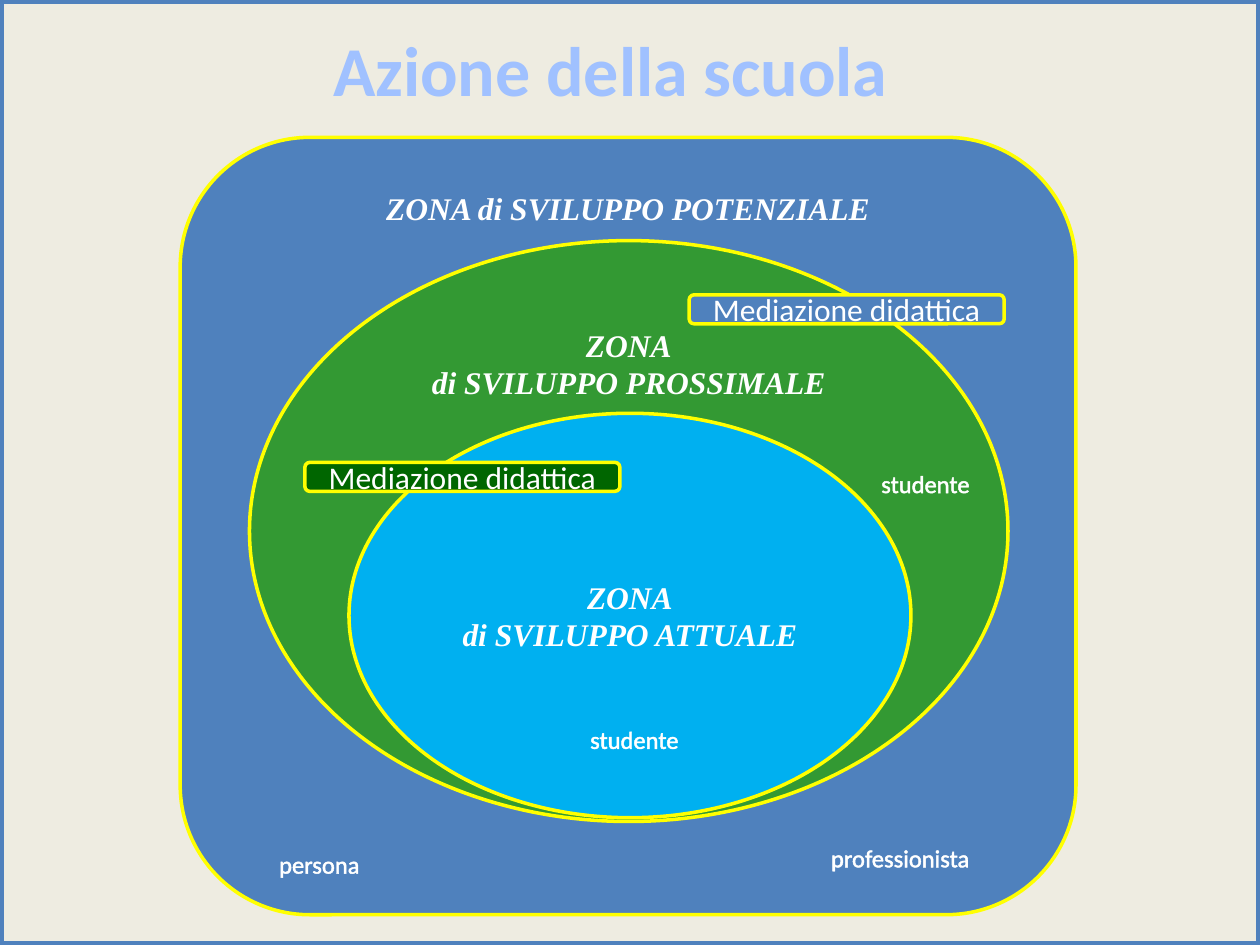
from lxml import etree
from pptx import Presentation
from pptx.dml.color import RGBColor
from pptx.enum.shapes import MSO_SHAPE as Shape
from pptx.enum.text import MSO_ANCHOR as Anchor, PP_ALIGN as Align
from pptx.oxml.ns import qn
from pptx.util import Inches, Pt

BLUE, YELLOW, WHITE = "4F81BD", "FFFF00", "FFFFFF"
GREEN, DARK_GREEN, SKY = "339933", "006600", "00B0F0"


def color(value):
    return RGBColor.from_string(value)


def write(shape, text, size, font="Calibri", ink=WHITE, bold=False, italic=False):
    frame = shape.text_frame
    frame.word_wrap = True
    frame.text = text
    for paragraph in frame.paragraphs:
        paragraph.alignment = Align.CENTER
        for run in paragraph.runs:
            run.font.size, run.font.name = Pt(size), font
            run.font.bold, run.font.italic = bold, italic
            run.font.color.rgb = color(ink)
    return frame


def add_outlined_shape(slide, kind, box, fill, line=YELLOW, width=2):
    shape = slide.shapes.add_shape(kind, *map(Inches, box))
    shape.shadow.inherit = False
    if fill:
        shape.fill.solid()
        shape.fill.fore_color.rgb = color(fill)
    else:
        shape.fill.background()
    shape.line.color.rgb = color(line)
    shape.line.width = Pt(width)
    return shape


def add_title(slide, box):
    title = slide.shapes.title
    title.left, title.top, title.width, title.height = map(Inches, box)
    frame = write(title, "Azione della scuola", 40, ink="A0C1FF", bold=True)
    frame.vertical_anchor = Anchor.MIDDLE


def add_zone(slide, kind, box, fill, text, anchor, margin=0.05):
    zone = add_outlined_shape(slide, kind, box, fill)
    frame = write(zone, text, 18, "Times New Roman", bold=True, italic=True)
    frame.vertical_anchor = anchor
    frame.margin_top = Inches(margin)


def add_mediation(slide, left, top, fill):
    box = (left, top, 2.5, 0.23)
    tag = add_outlined_shape(slide, Shape.ROUNDED_RECTANGLE, box, fill)
    write(tag, "Mediazione didattica", 18).vertical_anchor = Anchor.MIDDLE


def add_role(slide, text, left, top, width=1.95):
    label = slide.shapes.add_textbox(*map(Inches, (left, top, width, 0.34)))
    frame = write(label, text, 14)
    properties = frame.paragraphs[0].runs[0].font._element
    outline = etree.Element(qn("a:ln"), w=str(Pt(1.45)))
    fill = etree.SubElement(outline, qn("a:solidFill"))
    etree.SubElement(fill, qn("a:srgbClr"), val=WHITE)
    properties.insert(0, outline)


def add_zones(slide):
    add_zone(slide, Shape.ROUNDED_RECTANGLE, (1.43, 1.09, 7.11, 6.17), BLUE,
             "ZONA di SVILUPPO POTENZIALE", Anchor.TOP, 0.11)
    add_outlined_shape(slide, Shape.RECTANGLE, (0, 0, 10, 7.5), None, BLUE, 4.5)
    add_zone(slide, Shape.OVAL, (1.98, 1.91, 6.02, 4.61), GREEN,
             "ZONA\ndi SVILUPPO PROSSIMALE", Anchor.TOP, 0)
    add_zone(slide, Shape.OVAL, (2.77, 3.28, 4.46, 3.21), SKY,
             "ZONA\ndi SVILUPPO ATTUALE", Anchor.MIDDLE)


def main():
    presentation = Presentation()
    presentation.slide_width, presentation.slide_height = Inches(10), Inches(7.5)
    slide = presentation.slides.add_slide(presentation.slide_layouts[5])
    slide.background.fill.solid()
    slide.background.fill.fore_color.rgb = color("EEECE1")
    add_title(slide, (1.33, 0.16, 7.03, 0.77))
    add_zones(slide)
    add_mediation(slide, 2.42, 3.67, DARK_GREEN)
    add_mediation(slide, 5.47, 2.34, BLUE)
    add_role(slide, "studente", 4.06, 5.7)
    add_role(slide, "studente", 6.72, 3.67, 1.25)
    add_role(slide, "persona", 1.56, 6.69)
    add_role(slide, "professionista", 6.17, 6.64)
    presentation.save("out.pptx")


if __name__ == "__main__":
    main()
